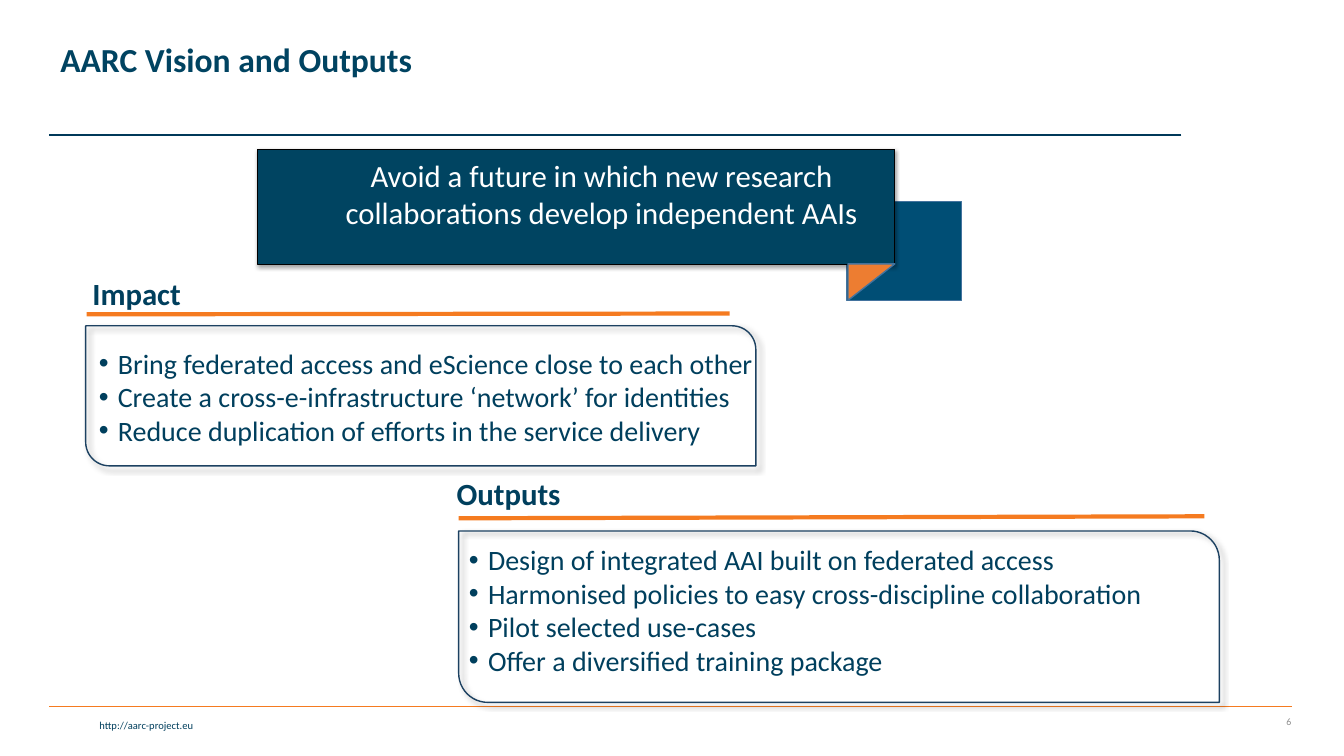
import lxml.etree
import pptx
import pptx.dml.color
import pptx.enum.shapes
import pptx.enum.text
import pptx.oxml.ns
import pptx.util

Cm = pptx.util.Cm
Pt = pptx.util.Pt
RGBColor = pptx.dml.color.RGBColor
qn = pptx.oxml.ns.qn
SHAPE = pptx.enum.shapes.MSO_SHAPE
ALIGN = pptx.enum.text.PP_ALIGN
ANCHOR = pptx.enum.text.MSO_ANCHOR

WHITE = RGBColor(0xFF, 0xFF, 0xFF)
BLACK = RGBColor(0x00, 0x00, 0x00)
NAVY = RGBColor(0x00, 0x43, 0x61)
BANNER_BLUE = RGBColor(0x00, 0x44, 0x61)
TEXT_BLUE = RGBColor(0x00, 0x3F, 0x5D)
RULE_BLUE = RGBColor(0x00, 0x39, 0x59)
PANEL_BLUE = RGBColor(0x1C, 0x41, 0x61)
SQUARE_BLUE = RGBColor(0x00, 0x4E, 0x75)
EDGE_BLUE = RGBColor(0x43, 0x73, 0x9E)
ORANGE = RGBColor(0xF5, 0x7B, 0x20)
FOLD_ORANGE = RGBColor(0xED, 0x7D, 0x31)
GREY = RGBColor(0x8C, 0x8C, 0x8C)


def write_text(frame, lines, size=20, color=TEXT_BLUE, bold=False,
               align=ALIGN.LEFT, anchor=ANCHOR.TOP, bullet=False):
    frame.word_wrap = True
    frame.vertical_anchor = anchor
    for index, line in enumerate(lines):
        para = frame.paragraphs[0] if index == 0 else frame.add_paragraph()
        para.alignment = align
        if bullet:
            properties = para._p.get_or_add_pPr()
            properties.set("marL", str(Cm(0.79)))
            properties.set("indent", str(-Cm(0.48)))
            font = lxml.etree.SubElement(properties, qn("a:buFont"))
            font.set("typeface", "Arial")
            lxml.etree.SubElement(properties, qn("a:buChar")).set("char", "•")
        span = para.add_run()
        span.text = line
        span.font.name = "Calibri"
        span.font.size = Pt(size)
        span.font.bold = bold
        span.font.color.rgb = color


deck = pptx.Presentation()
deck.slide_width = Cm(33.87)
deck.slide_height = Cm(19.05)
page = deck.slides.add_slide(deck.slide_layouts[6])

rules = [
    (1.24, 17.81, 32.56, 17.81, ORANGE, 1),
    (29.77, 3.4, 1.24, 3.4, RULE_BLUE, 1),
    (2.18, 7.92, 18.39, 7.9, ORANGE, 3),
    (11.56, 13.06, 30.35, 13.01, ORANGE, 3),
]
for x1, y1, x2, y2, color, width in rules:
    rule = page.shapes.add_connector(
        pptx.enum.shapes.MSO_CONNECTOR.STRAIGHT, Cm(x1), Cm(y1), Cm(x2), Cm(y2))
    rule.line.color.rgb = color
    rule.line.width = Pt(width)
    lxml.etree.SubElement(rule._element.spPr, qn("a:effectLst"))

panel_shadow = (40, 4, 3, 45)
banner_shadow = (35, 3.1, 1.8, 90)
shapes = [
    ("impact panel", SHAPE.ROUND_2_DIAG_RECTANGLE, (2.16, 8.21, 16.89, 3.53),
     None, PANEL_BLUE, 1, panel_shadow),
    ("outputs panel", SHAPE.ROUND_2_DIAG_RECTANGLE, (11.56, 13.38, 19.17, 4.32),
     None, PANEL_BLUE, 1, panel_shadow),
    ("square", SHAPE.RECTANGLE, (21.34, 5.08, 2.9, 2.49),
     SQUARE_BLUE, EDGE_BLUE, 1, None),
    ("banner", SHAPE.RECTANGLE, (6.5, 3.76, 16.05, 2.9),
     BANNER_BLUE, BLACK, 0.75, banner_shadow),
    ("fold", SHAPE.RIGHT_TRIANGLE, (21.5, 6.52, 0.92, 1.18),
     FOLD_ORANGE, EDGE_BLUE, 1, None),
]
drawn = {}
for name, kind, place, fill, edge, width, shadow in shapes:
    shape = page.shapes.add_shape(kind, *map(Cm, place))
    if fill is None:
        shape.fill.background()
    else:
        shape.fill.solid()
        shape.fill.fore_color.rgb = fill
    shape.line.color.rgb = edge
    shape.line.width = Pt(width)
    shape.shadow.inherit = False
    if kind == SHAPE.ROUND_2_DIAG_RECTANGLE:
        shape.adjustments[0] = 0
        shape.adjustments[1] = 0.17
    if shadow:
        alpha, blur, distance, angle = shadow
        effects = shape._element.spPr.find(qn("a:effectLst"))
        outer = lxml.etree.SubElement(effects, qn("a:outerShdw"))
        outer.set("blurRad", str(Pt(blur)))
        outer.set("dist", str(Pt(distance)))
        outer.set("dir", str(angle * 60000))
        outer.set("rotWithShape", "0")
        tint = lxml.etree.SubElement(outer, qn("a:srgbClr"))
        tint.set("val", str(BLACK))
        lxml.etree.SubElement(tint, qn("a:alpha")).set("val", str(alpha * 1000))
    drawn[name] = shape

drawn["fold"].rotation = 90
banner = drawn["banner"].text_frame
banner.margin_left = Cm(1.45)
banner.margin_right = Cm(0.18)
banner.margin_top = Cm(0.19)
write_text(banner, ["Avoid a future in which new research collaborations develop independent AAIs"],
           size=22, color=WHITE, align=ALIGN.CENTER)

heading = {"size": 22, "bold": True}
bullets = {"bullet": True}
texts = [
    ((1.27, 0.15, 26.7, 2.7), ["AARC Vision and Outputs"],
     {"size": 24, "color": NAVY, "bold": True, "anchor": ANCHOR.MIDDLE}),
    ((2.08, 6.81, 4.45, 1.19), ["Impact"], heading),
    ((1.93, 8.6, 17.45, 3.68), [
        "Bring federated access and eScience close to each other",
        "Create a cross-e-infrastructure ‘network’ for identities",
        "Reduce duplication of efforts in the service delivery",
    ], bullets),
    ((11.26, 11.84, 4.57, 1.5), ["Outputs"], heading),
    ((11.26, 13.55, 19.46, 3.68), [
        "Design of integrated AAI built on federated access",
        "Harmonised policies to easy cross-discipline collaboration",
        "Pilot selected use-cases",
        "Offer a diversified training package",
    ], bullets),
    ((0.07, 17.99, 5.05, 0.58), ["http://aarc-project.eu"],
     {"size": 7.5, "align": ALIGN.RIGHT}),
    ((30.73, 17.81, 2.06, 0.76), ["6"],
     {"size": 7, "color": GREY, "align": ALIGN.RIGHT, "anchor": ANCHOR.MIDDLE}),
]
for place, lines, style in texts:
    box = page.shapes.add_textbox(*map(Cm, place))
    write_text(box.text_frame, lines, **style)

deck.save("out.pptx")
